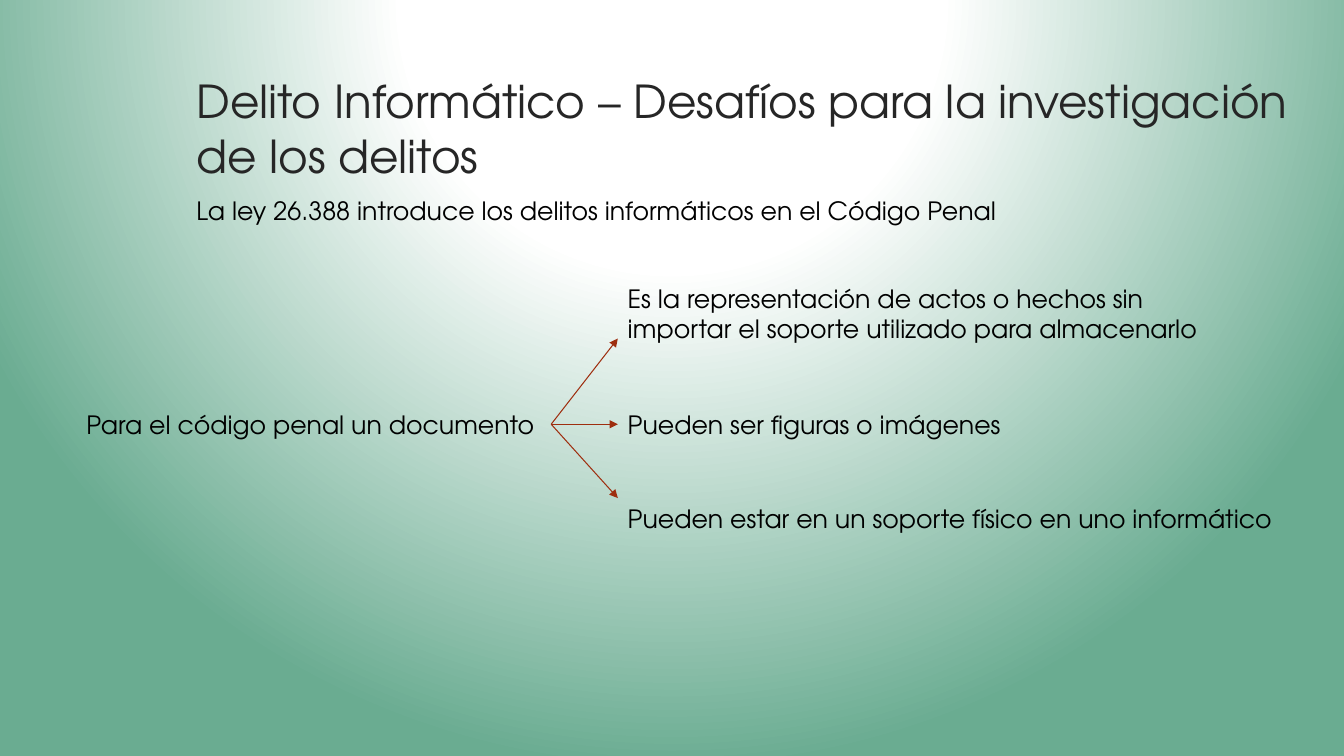
from pptx import Presentation
from pptx.dml.color import RGBColor
from pptx.enum.shapes import MSO_CONNECTOR
from pptx.enum.text import MSO_ANCHOR, MSO_AUTO_SIZE
from pptx.oxml import parse_xml
from pptx.oxml.ns import nsdecls
from pptx.oxml.xmlchemy import OxmlElement as Element
from pptx.util import Cm, Pt

FONT = "TeX Gyre Adventor"
TITLE_GREY = RGBColor(0x26, 0x26, 0x26)
BLACK = RGBColor(0x00, 0x00, 0x00)
RUST = RGBColor(0x9E, 0x2E, 0x0F)
WHITE = RGBColor(0xFF, 0xFF, 0xFF)
GREEN = RGBColor(0x6A, 0xAC, 0x91)

LEFT_TITLE, LEFT_ITEMS = 4.7, 15.57
LINE_H = 1.02


def set_background(slide):
    """Circular glow, white above the slide's top edge and green outwards."""
    stops = "".join(
        f'<a:gs pos="{pos * 1000}"><a:srgbClr val="{color}"/></a:gs>'
        for pos, color in ((0, WHITE), (35, WHITE), (100, GREEN)))
    bg = parse_xml(
        f'<p:bg {nsdecls("p", "a")}><p:bgPr><a:gradFill rotWithShape="1">'
        f'<a:gsLst>{stops}</a:gsLst><a:path path="circle">'
        '<a:fillToRect l="50000" t="-80000" r="50000" b="180000"/>'
        '</a:path></a:gradFill><a:effectLst/></p:bgPr></p:bg>')
    slide.element.cSld.insert(0, bg)


def add_text(slide, text, left, top, width, height=LINE_H,
             size=18, color=BLACK, wrap=False):
    sp = slide.shapes.add_textbox(Cm(left), Cm(top), Cm(width), Cm(height))
    tf = sp.text_frame
    tf.text = text
    tf.word_wrap = wrap
    tf.auto_size = MSO_AUTO_SIZE.NONE
    tf.vertical_anchor = MSO_ANCHOR.TOP
    font = tf.paragraphs[0].runs[0].font
    font.name, font.size = FONT, Pt(size)
    font.color.rgb = color
    return sp


def add_arrow(slide, source, x, y):
    """Arrow from the middle of the source's right side to a point."""
    cxn = slide.shapes.add_connector(
        MSO_CONNECTOR.STRAIGHT, 0, 0, Cm(x), Cm(y))
    cxn.begin_connect(source, 3)
    cxn.line.color.rgb = RUST
    cxn.line.width = Pt(0.75)
    tail = Element("a:tailEnd")
    tail.set("type", "triangle")
    cxn.line._get_or_add_ln().append(tail)
    cxn.element.spPr.append(Element("a:effectLst"))
    return cxn


def main():
    prs = Presentation()
    prs.slide_width, prs.slide_height = Cm(33.87), Cm(19.05)
    slide = prs.slides.add_slide(prs.slide_layouts[6])
    set_background(slide)

    add_text(slide, "Delito Informático – Desafíos para la investigación "
             "de los delitos", LEFT_TITLE, 1.73, 28.4, 2.9,
             size=32.4, color=TITLE_GREY, wrap=True)
    add_text(slide, "La ley 26.388 introduce los delitos informáticos en el "
             "Código Penal", LEFT_TITLE, 4.8, 20.96)

    document = add_text(slide, "Para el código penal un documento",
                        1.93, 10.18, 11.96)
    add_text(slide, "Es la representación de actos o hechos sin importar el "
             "soporte utilizado para almacenarlo",
             LEFT_ITEMS, 7.01, 16.26, 1.8, wrap=True)
    figures = add_text(slide, "Pueden ser figuras o imágenes",
                       LEFT_ITEMS, 10.18, 10.06)
    add_text(slide, "Pueden estar en un soporte físico en uno informático",
             LEFT_ITEMS, 12.55, 16.99)

    add_arrow(slide, document, LEFT_ITEMS, 12.55)
    add_arrow(slide, document, LEFT_ITEMS, 10.69).end_connect(figures, 1)
    add_arrow(slide, document, LEFT_ITEMS, 8.53)

    prs.save("out.pptx")


if __name__ == "__main__":
    main()
